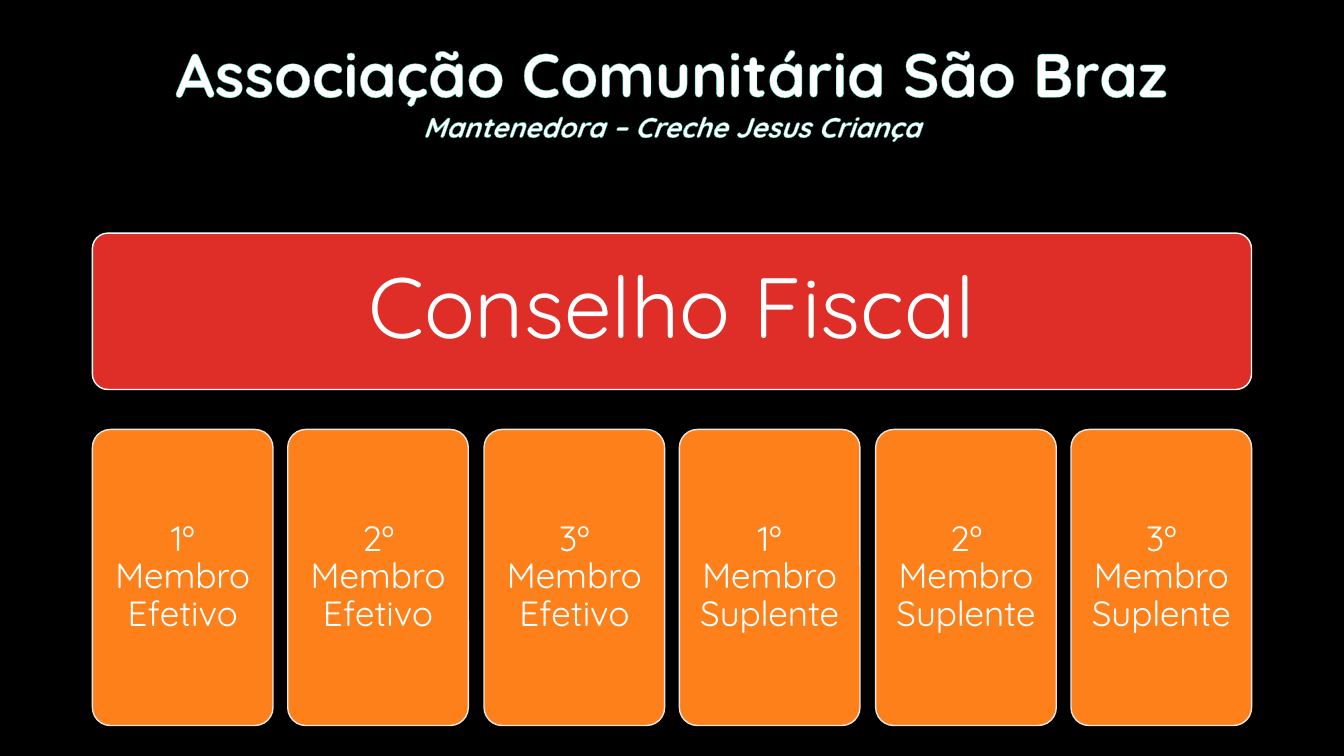
"""Build the fiscal council slide of the Associação Comunitária São Braz."""
from dataclasses import dataclass

from lxml.etree import SubElement
from pptx import Presentation
from pptx.dml.color import RGBColor
from pptx.enum.shapes import MSO_SHAPE
from pptx.enum.text import MSO_ANCHOR, MSO_AUTO_SIZE, PP_ALIGN
from pptx.oxml.ns import qn
from pptx.slide import Slide
from pptx.text.text import TextFrame, _Paragraph
from pptx.util import Pt

PX = 9525
FONT = "Quicksand"
COLORS = {
    "background": "000000",
    "text": "FFFFFF",
    "outline": "32C7A9",
    "council": "DF2E28",
    "council_line": "FFFFFF",
    "member": "FE801A",
    "member_line": "E7E7E7",
}
LEFT, WIDTH = 88, 1104
CARD_WIDTH, CARD_TOP, CARD_HEIGHT = 172, 409, 282
MEMBERS = [f"{n}º Membro {role}" for role in ("Efetivo", "Suplente") for n in (1, 2, 3)]


@dataclass
class Box:
    """A rounded box: text, place in px, colour key, text size and inset."""
    text: str
    left: int
    top: int
    width: int
    height: int
    color: str
    size: int
    inset: int


def rgb(name: str) -> RGBColor:
    """Return a named colour."""
    return RGBColor.from_string(COLORS[name])


def write(p: _Paragraph, text: str, *, size: int, bold: bool = False,
          italic: bool = False, spacing: float = 1.0, outline: bool = False) -> None:
    """Write centred, formatted text into a paragraph."""
    p.alignment = PP_ALIGN.CENTER
    p.line_spacing = spacing
    r = p.add_run()
    r.text = text
    r.font.name = FONT
    r.font.size = Pt(size)
    r.font.bold = bold
    r.font.italic = italic
    r.font.color.rgb = rgb("text")
    if outline:
        rpr = r.font._element
        ln = SubElement(rpr, qn("a:ln"), w=str(Pt(0.8)))
        fill = SubElement(ln, qn("a:solidFill"))
        SubElement(fill, qn("a:srgbClr"), val=COLORS["outline"])
        rpr.insert(0, ln)


def set_insets(tf: TextFrame, x: int, y: int) -> None:
    """Set the side and the top and bottom insets in px."""
    tf.margin_left = tf.margin_right = x * PX
    tf.margin_top = tf.margin_bottom = y * PX


def add_title(s: Slide) -> None:
    """Fill and place the title placeholder."""
    sp = s.shapes.title
    sp.left, sp.top, sp.width, sp.height = (v * PX for v in (145, 29, 990, 113))
    tf = sp.text_frame
    tf.word_wrap = False
    tf.auto_size = MSO_AUTO_SIZE.NONE
    tf.vertical_anchor = MSO_ANCHOR.TOP
    set_insets(tf, 10, 5)
    write(tf.paragraphs[0], "Associação Comunitária São Braz",
          size=44, bold=True, outline=True)
    write(tf.add_paragraph(), "Mantenedora – Creche Jesus Criança",
          size=20, bold=True, italic=True, outline=True)


def add_box(s: Slide, box: Box) -> None:
    """Draw a rounded box with its centred text."""
    place = (v * PX for v in (box.left, box.top, box.width, box.height))
    sp = s.shapes.add_shape(MSO_SHAPE.ROUNDED_RECTANGLE, *place)
    sp.adjustments[0] = 0.1
    sp.shadow.inherit = False
    sp.fill.solid()
    sp.fill.fore_color.rgb = rgb(box.color)
    sp.line.color.rgb = rgb(f"{box.color}_line")
    sp.line.width = Pt(1)
    tf = sp.text_frame
    tf.word_wrap = True
    tf.vertical_anchor = MSO_ANCHOR.MIDDLE
    set_insets(tf, box.inset, box.inset)
    write(tf.paragraphs[0], box.text, size=box.size, spacing=0.9)


def main() -> None:
    """Build and save the slide."""
    prs = Presentation()
    prs.slide_width, prs.slide_height = 1280 * PX, 720 * PX
    s = prs.slides.add_slide(prs.slide_layouts[5])
    s.background.fill.solid()
    s.background.fill.fore_color.rgb = rgb("background")
    add_title(s)
    add_box(s, Box("Conselho Fiscal", LEFT, 222, WIDTH, 149, "council", 61, 28))
    pitch = (WIDTH - CARD_WIDTH) / (len(MEMBERS) - 1)
    for i, member in enumerate(MEMBERS):
        add_box(s, Box(member, LEFT + round(i * pitch), CARD_TOP,
                       CARD_WIDTH, CARD_HEIGHT, "member", 25, 14))
    prs.save("out.pptx")


if __name__ == "__main__":
    main()
